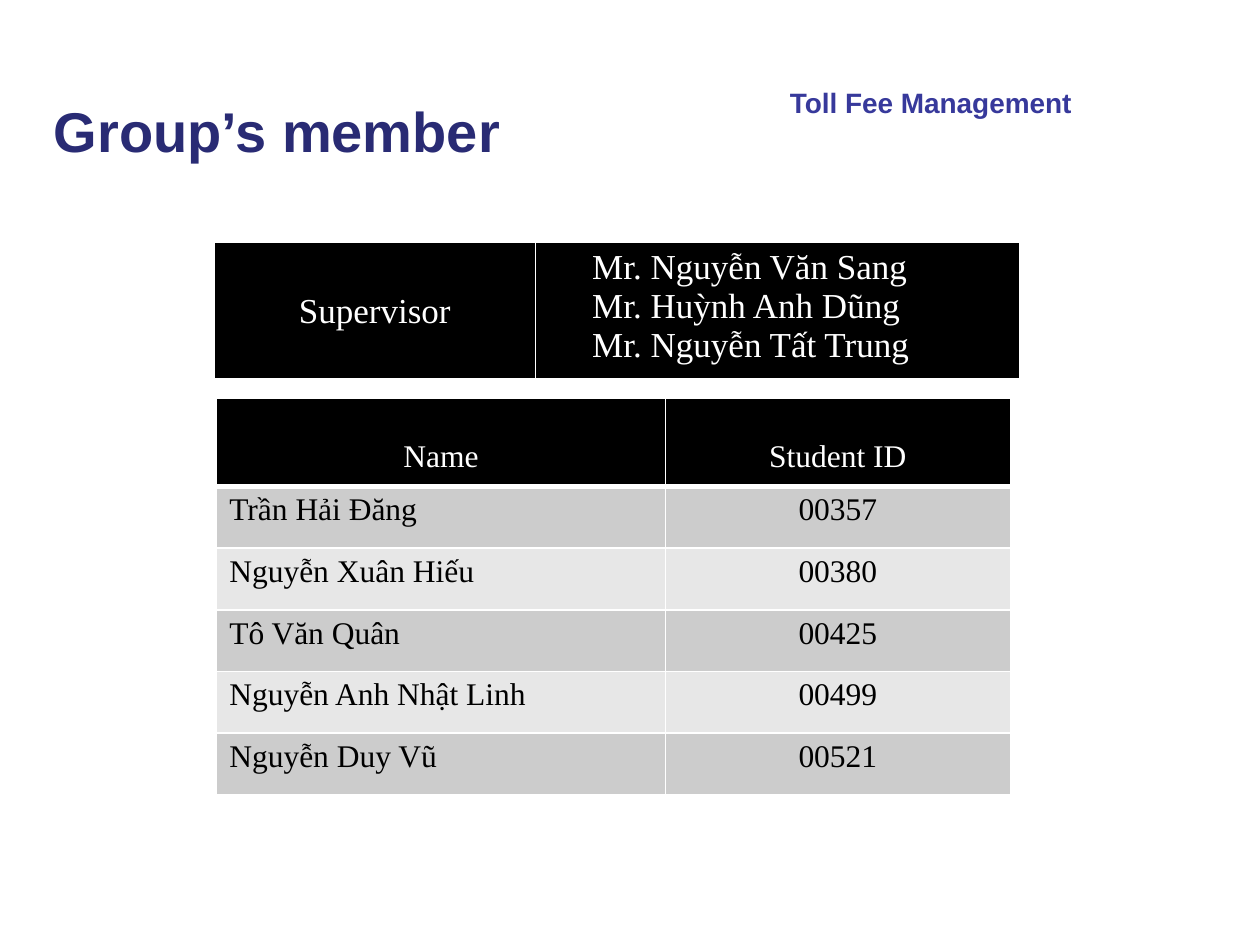
from lxml.etree import SubElement
from pptx import Presentation
from pptx.dml.color import RGBColor
from pptx.enum.text import MSO_ANCHOR, PP_ALIGN
from pptx.oxml.ns import qn
from pptx.util import Emu, Inches, Pt

# Content
TITLE = "Group’s member"
PROJECT = "Toll Fee Management"
SUPERVISORS = ["Mr. Nguyễn Văn Sang", "Mr. Huỳnh Anh Dũng", "Mr. Nguyễn Tất Trung"]
HEADER = ("Name", "Student ID")
STUDENTS = [
    ("Trần Hải Đăng", "00357"),
    ("Nguyễn Xuân Hiếu", "00380"),
    ("Tô Văn Quân", "00425"),
    ("Nguyễn Anh Nhật Linh", "00499"),
    ("Nguyễn Duy Vũ", "00521"),
]

NAVY = RGBColor(0x29, 0x2B, 0x74)
INDIGO = RGBColor(0x37, 0x39, 0x9B)
BLACK = RGBColor(0, 0, 0)
WHITE = RGBColor(0xFF, 0xFF, 0xFF)
BANDS = (RGBColor(0xCC, 0xCC, 0xCC), RGBColor(0xE7, 0xE7, 0xE7))
SANS, SERIF = "Arial", "Times New Roman"


def add_run(p, text, size, font, color, bold=False):
    r = p.add_run()
    r.text = text
    r.font.size, r.font.name, r.font.bold = Pt(size), font, bold
    r.font.color.rgb = color


def add_label(s, box, text, size, color):
    tf = s.shapes.add_textbox(*map(Inches, box)).text_frame
    tf.word_wrap = True
    tf.vertical_anchor = MSO_ANCHOR.MIDDLE
    add_run(tf.paragraphs[0], text, size, SANS, color, bold=True)


def add_grid(s, left, top, cols, rows):
    shape = s.shapes.add_table(len(rows), len(cols), Inches(left), Inches(top),
                               Inches(sum(cols)), Inches(sum(rows)))
    table = shape.table
    table.first_row = table.horz_banding = False
    for col, width in zip(table.columns, cols):
        col.width = Inches(width)
    for row, height in zip(table.rows, rows):
        row.height = Inches(height)
    return table


def fill_cell(cell, lines, size, color, fill, align=PP_ALIGN.LEFT, spacing=None, bottom=1):
    # Borders come before the fill in the cell properties
    tcPr = cell._tc.get_or_add_tcPr()
    for side, width in (("L", 1), ("R", 1), ("T", 1), ("B", bottom)):
        ln = SubElement(tcPr, qn(f"a:ln{side}"), w=str(Emu(Pt(width))))
        SubElement(SubElement(ln, qn("a:solidFill")), qn("a:srgbClr"), val=str(WHITE))
    cell.fill.solid()
    cell.fill.fore_color.rgb = fill
    tf = cell.text_frame
    for i, line in enumerate(lines):
        p = tf.add_paragraph() if i else tf.paragraphs[0]
        p.alignment = align
        if spacing:
            p.line_spacing = spacing
        add_run(p, line, size, SERIF, color)


prs = Presentation()
prs.slide_width, prs.slide_height = Inches(10), Inches(7.5)
s = prs.slides.add_slide(prs.slide_layouts[6])

# Headings
add_label(s, (0.33, 0.72, 5.42, 0.62), TITLE, 32, NAVY)
add_label(s, (6.17, 0.63, 2.58, 0.37), PROJECT, 16, INDIGO)

# Students
table = add_grid(s, 1.72, 3.16, (3.56, 2.74), [0.67] + [0.49] * len(STUDENTS))
for c, text in enumerate(HEADER):
    fill_cell(table.cell(0, c), [text], 18, WHITE, BLACK, PP_ALIGN.CENTER, 2.0, bottom=3)
for i, student in enumerate(STUDENTS):
    for c, (text, align) in enumerate(zip(student, (PP_ALIGN.LEFT, PP_ALIGN.CENTER))):
        fill_cell(table.cell(i + 1, c), [text], 18, BLACK, BANDS[i % 2], align)

# Supervisors
table = add_grid(s, 1.7, 1.92, (2.55, 3.84), [1.02])
label, names = table.cell(0, 0), table.cell(0, 1)
fill_cell(label, ["Supervisor"], 20, WHITE, BLACK, PP_ALIGN.CENTER, bottom=3)
label.vertical_anchor = MSO_ANCHOR.MIDDLE
fill_cell(names, SUPERVISORS, 20, WHITE, BLACK, bottom=3)
names.margin_left = Inches(0.45)

prs.save("out.pptx")
